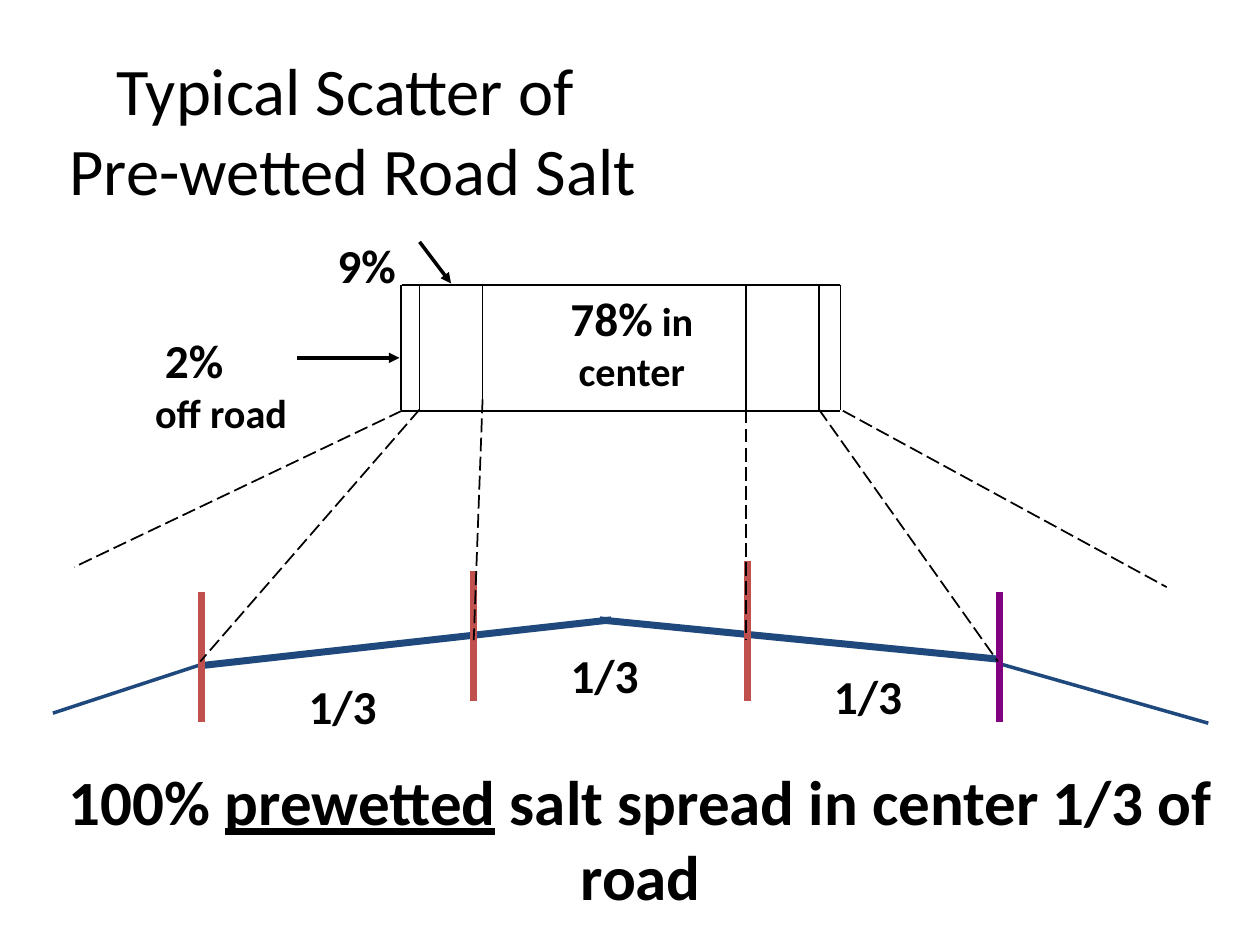
"""Build a slide on the typical scatter of pre-wetted road salt across a crowned road."""
from lxml import etree
from pptx import Presentation
from pptx import util as u
from pptx.dml.color import RGBColor
from pptx.enum import dml, shapes, text
from pptx.oxml.ns import qn

deck = Presentation()
deck.slide_width, deck.slide_height = u.Inches(10), u.Inches(7.5)
col, row = deck.slide_width / 100, deck.slide_height / 75
slide = deck.slides.add_slide(deck.slide_layouts[5])
BLACK, ROAD, MARKER, EDGE = "000000", "1F497D", "C0504D", "800080"


def draw_line(start, end, color, width, dashed=False, arrow=False):
    line = slide.shapes.add_connector(
        shapes.MSO_CONNECTOR.STRAIGHT,
        round(start[0] * col), round(start[1] * row), round(end[0] * col), round(end[1] * row))
    line.line.color.rgb = RGBColor.from_string(color)
    line.line.width = u.Pt(width)
    if dashed:
        line.line.dash_style = dml.MSO_LINE.LONG_DASH
    if arrow:
        etree.SubElement(line.line._get_or_add_ln(), qn("a:tailEnd"), type="triangle")
    etree.SubElement(line._element.spPr, qn("a:effectLst"))


def write_label(left, top, width, height, paragraphs, centred=True):
    label = slide.shapes.add_textbox(
        round(left * col), round(top * row), round(width * col), round(height * row))
    frame = label.text_frame
    frame.word_wrap = True
    for index, runs in enumerate(paragraphs):
        paragraph = frame.add_paragraph() if index else frame.paragraphs[0]
        paragraph.alignment = text.PP_ALIGN.CENTER if centred else text.PP_ALIGN.LEFT
        for wording, size in runs:
            run = paragraph.add_run()
            run.text = wording
            run.font.name, run.font.size, run.font.bold = "Calibri", u.Pt(size), True
            run.font.color.rgb = RGBColor.from_string(BLACK)
    return frame


title = slide.shapes.title
title.left, title.top = round(1.9 * col), round(3.3 * row)
title.width, title.height = round(52.2 * col), round(13.8 * row)
title.text_frame.text = "Typical Scatter of \nPre-wetted Road Salt"
title.text_frame.auto_size = text.MSO_AUTO_SIZE.NONE
title.text_frame.vertical_anchor = text.MSO_ANCHOR.MIDDLE
for paragraph in title.text_frame.paragraphs:
    paragraph.alignment = text.PP_ALIGN.CENTER
    for run in paragraph.runs:
        run.font.name, run.font.size = "Calibri", u.Pt(38)
        run.font.color.rgb = RGBColor.from_string(BLACK)

for start, end, width in [
    ((16.2, 52.8), (48.5, 49.2), 4), ((47.6, 49.2), (79.1, 52.3), 4),
    ((16.1, 52.7), (4.2, 56.6), 2), ((79.4, 52.7), (95.9, 57.4), 2),
]:
    draw_line(start, end, ROAD, width)

for x, top, bottom, color in [
    (16, 47, 57.3, MARKER), (79.3, 47, 57.3, EDGE),
    (37.6, 45.3, 55.6, MARKER), (59.3, 44.5, 55.6, MARKER),
]:
    draw_line((x, top), (x, bottom), color, 4)

band_top, band_bottom = 22.6, 32.6
for y in (band_top, band_bottom):
    draw_line((31.9, y), (66.7, y), BLACK, 1)
for x in (31.8, 33.3, 38.3, 59.2, 65, 66.7):
    draw_line((x, band_top), (x, band_bottom - 0.1), BLACK, 1)

for start, end in [
    ((31.9, 32.6), (5.9, 45)), ((33.3, 32.5), (15.9, 52.5)), ((38.3, 31.7), (37.6, 50.8)),
    ((59.2, 32.5), (59.2, 50.8)), ((65, 32.5), (79.2, 52.5)), ((66.9, 32.6), (92.6, 46.6)),
]:
    draw_line(start, end, BLACK, 1, dashed=True)

for start, end in [((33.3, 19.2), (35.8, 22.5)), ((23.6, 28.4), (31.7, 28.4))]:
    draw_line(start, end, BLACK, 2, arrow=True)

for left, top, width in [(23.5, 53.3, 8.2), (44.3, 50.8, 8.3), (65.2, 52.5, 7.4)]:
    write_label(left, top, width, 5.4, [[("1/3", 27)]], centred=False)
write_label(42.7, 22.5, 14.9, 9.3, [[("78%", 27), (" in center", 23)]])
write_label(25.8, 18.3, 13.2, 5.4, [[("9%", 27)]], centred=False)

off_road = write_label(10.1, 25.8, 14.9, 15, [[("2%", 27)], [("off road", 23)]])
off_road.paragraphs[0].alignment = text.PP_ALIGN.LEFT
off_road.paragraphs[0]._p.get_or_add_pPr().set("marL", str(round(2 * col)))

summary = write_label(
    4.2, 60, 93.3, 13,
    [[("100% ", 36), ("prewetted", 36), (" salt spread in center 1/3 of road", 36)]])
summary.paragraphs[0].runs[1].font.underline = True

deck.save("out.pptx")
